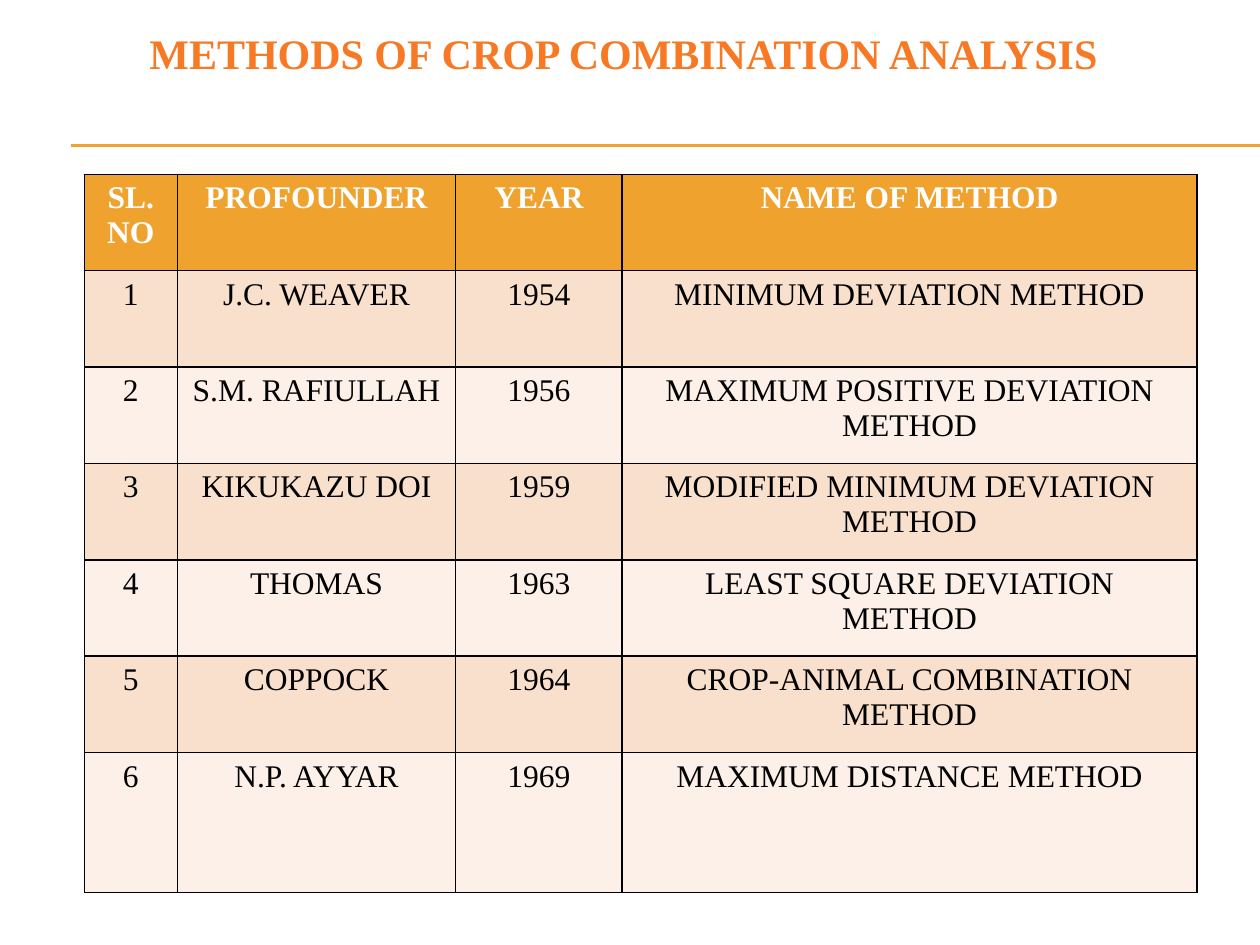
from dataclasses import dataclass

from lxml import etree
from pptx import Presentation
from pptx import util as u
from pptx.dml.color import RGBColor
from pptx.enum import shapes, text
from pptx.oxml import ns


@dataclass(frozen=True)
class Theme:
    font: str = "Times New Roman"
    title_size: float = 24
    table_size: float = 18
    title: str = "F87924"
    accent: str = "F0A22E"
    header_text: str = "FFFFFF"
    body_text: str = "000000"
    border: str = "000000"
    bands: tuple = ("F9E0CD", "FCF0E8")


THEME = Theme()
PAGE_WIDTH, PAGE_HEIGHT = 720, 540
COLUMN_WIDTHS = (53.2, 159, 95.2, 328.4)
ROW_HEIGHTS = (55.1,) * 6 + (79.8,)
HEADERS = ("SL. NO", "PROFOUNDER", "YEAR", "NAME OF METHOD")
METHODS = (
    ("J.C. WEAVER", "1954", "MINIMUM DEVIATION METHOD"),
    ("S.M. RAFIULLAH", "1956", "MAXIMUM POSITIVE DEVIATION METHOD"),
    ("KIKUKAZU DOI", "1959", "MODIFIED MINIMUM DEVIATION METHOD"),
    ("THOMAS", "1963", "LEAST SQUARE DEVIATION METHOD"),
    ("COPPOCK", "1964", "CROP-ANIMAL COMBINATION METHOD"),
    ("N.P. AYYAR", "1969", "MAXIMUM DISTANCE METHOD"),
)


def write_text(frame, content, *, size, color, bold=False):
    frame.word_wrap = True
    para = frame.paragraphs[0]
    para.alignment = text.PP_ALIGN.CENTER
    span = para.add_run()
    span.text = content
    span.font.name = THEME.font
    span.font.size = u.Pt(size)
    span.font.bold = bold
    span.font.color.rgb = RGBColor.from_string(color)


def add_title(page, content):
    box = page.shapes.add_textbox(u.Pt(-31.7), u.Pt(12.2), u.Pt(782), u.Pt(36))
    write_text(box.text_frame, content, size=THEME.title_size,
               color=THEME.title, bold=True)


def add_rule(page, top):
    rule = page.shapes.add_connector(
        shapes.MSO_CONNECTOR.STRAIGHT,
        u.Pt(40.5), u.Pt(top), u.Pt(PAGE_WIDTH), u.Pt(top))
    rule.line.color.rgb = RGBColor.from_string(THEME.accent)
    rule.line.width = u.Pt(0.75)
    etree.SubElement(rule._element.spPr, ns.qn("a:effectLst"))


def set_borders(cell):
    properties = cell._tc.get_or_add_tcPr()
    for position, side in enumerate(("lnL", "lnR", "lnT", "lnB")):
        border = etree.Element(ns.qn(f"a:{side}"), w=str(u.Pt(1)))
        fill = etree.SubElement(border, ns.qn("a:solidFill"))
        etree.SubElement(fill, ns.qn("a:srgbClr"), val=THEME.border)
        properties.insert(position, border)


def add_cell(cell, content, *, fill, color, bold):
    cell.fill.solid()
    cell.fill.fore_color.rgb = RGBColor.from_string(fill)
    set_borders(cell)
    write_text(cell.text_frame, content, size=THEME.table_size,
               color=color, bold=bold)


def add_methods_table(page):
    rows = [HEADERS] + [(str(number), *method)
                        for number, method in enumerate(METHODS, 1)]
    table = page.shapes.add_table(
        len(rows), len(HEADERS), u.Pt(48.2), u.Pt(99.6),
        u.Pt(sum(COLUMN_WIDTHS)), u.Pt(sum(ROW_HEIGHTS))).table
    for column, width in zip(table.columns, COLUMN_WIDTHS):
        column.width = u.Pt(width)
    for row, height in zip(table.rows, ROW_HEIGHTS):
        row.height = u.Pt(height)
    for i, values in enumerate(rows):
        header = i == 0
        fill = THEME.accent if header else THEME.bands[(i - 1) % 2]
        color = THEME.header_text if header else THEME.body_text
        for j, value in enumerate(values):
            add_cell(table.cell(i, j), value, fill=fill, color=color, bold=header)


def main():
    deck = Presentation()
    deck.slide_width, deck.slide_height = u.Pt(PAGE_WIDTH), u.Pt(PAGE_HEIGHT)
    page = deck.slides.add_slide(deck.slide_layouts[6])
    for top in (82.8, 83.5):
        add_rule(page, top)
    add_methods_table(page)
    add_title(page, "METHODS OF CROP COMBINATION ANALYSIS ")
    deck.save("out.pptx")


if __name__ == "__main__":
    main()
